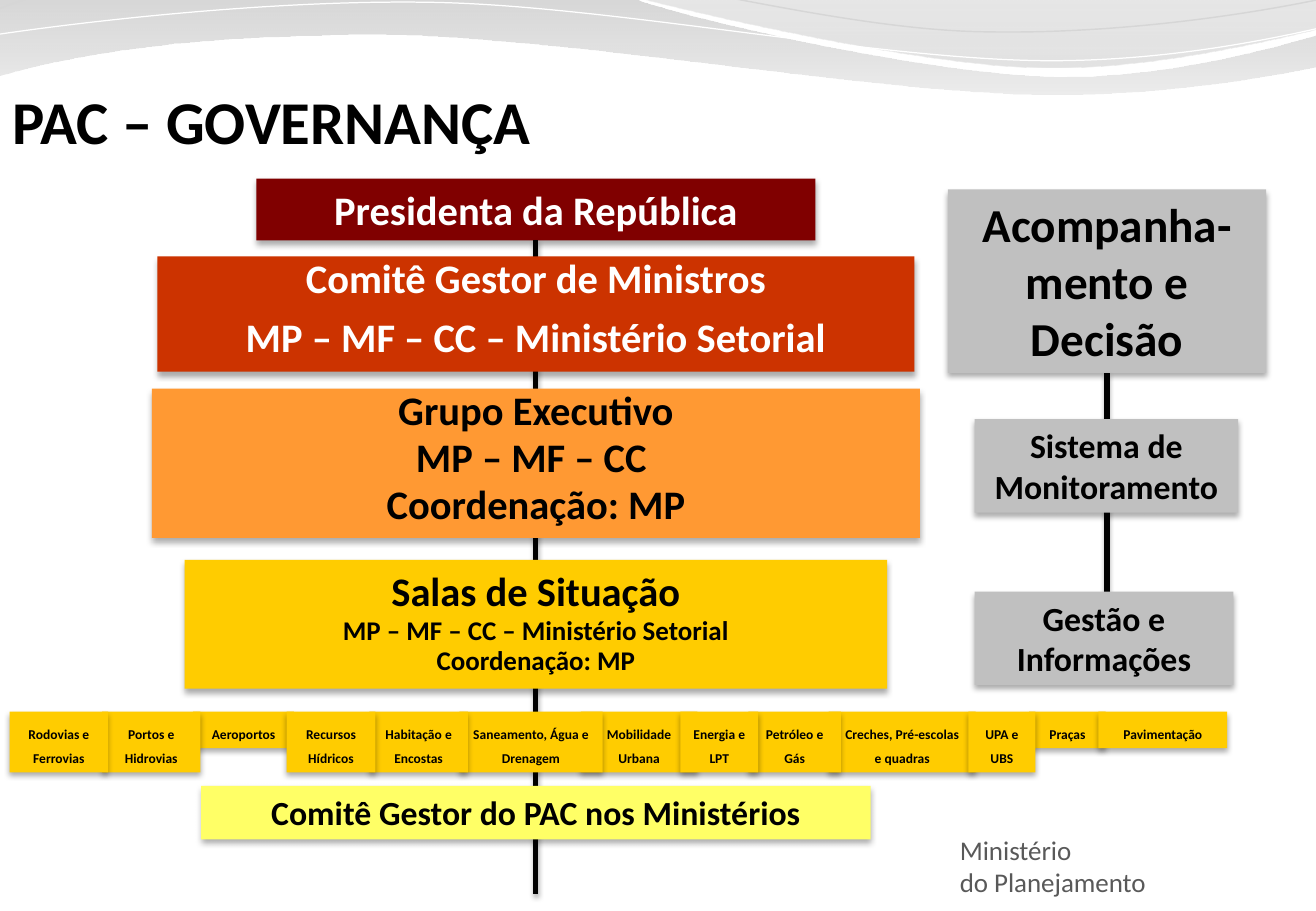
from dataclasses import dataclass

from lxml import etree
from pptx import Presentation
from pptx import util as u
from pptx.dml.color import RGBColor
from pptx.enum import shapes, text
from pptx.oxml.ns import qn

PX = 9144
SLIDE_W, SLIDE_H = 1083, 750


@dataclass(frozen=True)
class Theme:
    """Colours, font and type sizes of the slide."""
    font: str = "Calibri"
    ink: str = "000000"
    paper: str = "FFFFFF"
    muted: str = "595959"
    maroon: str = "800000"
    red: str = "CC3300"
    orange: str = "FF9933"
    gold: str = "FFCC00"
    lemon: str = "FFFF66"
    silver: str = "C0C0C0"
    hairline: str = "D6D6D6"
    low_wave: tuple = ((0, "A3A3A3", 45), (1, "DDDDDD", 55))
    high_wave: tuple = ((0, "B4B4B4", 30), (0.8, "C3C3C3", 45))
    title: int = 36
    heading: int = 28
    level: int = 24
    support: int = 20
    detail: int = 16
    sector: int = 8


T = Theme()


def px(*lengths):
    """Turn px lengths into EMU."""
    return [u.Emu(round(length * PX)) for length in lengths]


def write(frame, line, *, size, color=T.ink, bold=True, align="CENTER", leading=1.0, gap=0):
    """Add one formatted paragraph to a text frame."""
    first = frame.paragraphs[0]
    paragraph = frame.add_paragraph() if first.runs else first
    paragraph.alignment = getattr(text.PP_ALIGN, align)
    paragraph.line_spacing = leading
    paragraph.space_before = u.Pt(gap)
    run = paragraph.add_run()
    run.text = line
    run.font.name, run.font.size, run.font.bold = T.font, u.Pt(size), bold
    run.font.color.rgb = RGBColor.from_string(color)


def cast_shadow(part, alpha, blur, distance):
    """Give a part a soft shadow straight below it."""
    properties = part._element.spPr
    for old in properties.findall(qn("a:effectLst")):
        properties.remove(old)
    effects = etree.SubElement(properties, qn("a:effectLst"))
    outer = etree.SubElement(effects, qn("a:outerShdw"), blurRad=str(u.Pt(blur)),
                             dist=str(u.Pt(distance)), dir="5400000", algn="ctr", rotWithShape="0")
    tint = etree.SubElement(outer, qn("a:srgbClr"), val=T.ink)
    etree.SubElement(tint, qn("a:alpha"), val=str(alpha * 1000))


def block(slide, box, fill, lines, anchor="TOP", **style):
    """Draw a filled rectangle; each line is text or a pair of text and format."""
    panel = slide.shapes.add_shape(shapes.MSO_SHAPE.RECTANGLE, *px(*box))
    panel.fill.solid()
    panel.fill.fore_color.rgb = RGBColor.from_string(fill)
    panel.line.fill.background()
    panel.shadow.inherit = False
    cast_shadow(panel, 32, 3.5, 2.2)
    frame = panel.text_frame
    frame.word_wrap = True
    frame.vertical_anchor = getattr(text.MSO_ANCHOR, anchor)
    for index, line in enumerate(lines):
        label, extra = (line, {}) if isinstance(line, str) else line
        options = {**style, **extra}
        if index == 0:
            options["gap"] = 0
        write(frame, label, **options)
    return panel


def stem(slide, x, top, bottom):
    """Draw a thick vertical line."""
    line = slide.shapes.add_connector(shapes.MSO_CONNECTOR.STRAIGHT, *px(x, top, x, bottom))
    line.line.width = u.Pt(3)
    line.line.color.rgb = RGBColor.from_string(T.ink)
    cast_shadow(line, 35, 3.1, 1.8)
    return line


def outline(slide, start, *legs, close=True):
    """Build a freeform; legs of two numbers are straight, legs of six are cubic curves."""
    points = [leg[i:i + 2] for leg in legs for i in range(0, len(leg), 2)]
    builder = slide.shapes.build_freeform(*start, scale=PX)
    builder.add_line_segments(points, close=close)
    shape = builder.convert_to_shape()
    shape.shadow.inherit = False
    segments = iter(list(shape._element.spPr.iter(qn("a:lnTo"))))
    for leg in legs:
        segment = next(segments)
        if len(leg) == 6:
            curve = etree.Element(qn("a:cubicBezTo"))
            segment.addprevious(curve)
            for straight in (segment, next(segments), next(segments)):
                curve.append(straight[0])
                straight.getparent().remove(straight)
    return shape


def wave(slide, stops, start, *legs):
    """Draw a translucent gradient wave."""
    band = outline(slide, start, *legs)
    band.line.fill.background()
    band.fill.gradient()
    band.fill.gradient_angle = 270
    for stop, (position, color, alpha) in zip(band.fill.gradient_stops, stops):
        stop.position = position
        stop.color.rgb = RGBColor.from_string(color)
        tint = stop._gs.find(qn("a:srgbClr"))
        etree.SubElement(tint, qn("a:alpha"), val=str(alpha * 1000))


def ripple(slide, color, width, start, *legs):
    """Draw a thin curve."""
    curve = outline(slide, start, *legs, close=False)
    curve.fill.background()
    curve.line.color.rgb = RGBColor.from_string(color)
    curve.line.width = u.Pt(width)


def draw_header(slide):
    """Draw the waves across the top of the slide."""
    wave(slide, T.low_wave, (-39, -11), (494, -11), (536, 9, 763, 63, 878, 63),
         (993, 63, 1120, 19, 1170, 0), (1171, 10, 1171, 21, 1171, 32),
         (1150, 41, 1013, 78, 863, 78), (713, 77, 423, 22, 272, 29),
         (117, 31, 20, 53, -40, 75), (-40, 30, -39, 33, -39, -11))
    wave(slide, T.high_wave, (488, -12), (525, 0, 742, 52, 851, 55),
         (960, 59, 1093, 21, 1141, 10), (1141, -11))
    ripple(slide, T.hairline, 0.85, (-5, 9), (50, -14, 186, -48, 321, -45),
           (455, -42, 662, 22, 802, 26), (943, 30, 1095, 2, 1163, -20))
    ripple(slide, T.paper, 0.75, (-25, 32), (28, 23, 209, -1, 358, 2),
           (508, 5, 731, 51, 870, 50), (1009, 49, 1126, 13, 1193, -4))


def draw_title(slide, box):
    """Fill the title placeholder, outlined as a freeform in front of the other parts."""
    left, top, width, height = box
    title = slide.shapes.title
    title.left, title.top, title.width, title.height = px(*box)
    edge = outline(slide, (left, top), (left + width, top), (left + width, top + height),
                   (left, top + height))._element
    title._element.spPr.append(edge.spPr.find(qn("a:custGeom")))
    edge.getparent().replace(edge, title._element)
    frame = title.text_frame
    frame.auto_size = text.MSO_AUTO_SIZE.NONE
    frame.vertical_anchor = text.MSO_ANCHOR.TOP
    write(frame, "PAC – GOVERNANÇA", size=T.title, align="LEFT", leading=0.75)


def draw_hierarchy(slide, box):
    """Draw the levels of government, centred on one stem."""
    left, top, width, height = box
    center = left + width / 2

    def level(y, w, h, fill, lines, **style):
        """Draw one centred level."""
        return block(slide, (center - w / 2, top + y, w, h), fill, lines,
                     **{"size": T.level, **style})

    president = level(0, 460, 51, T.maroon, ["Presidenta da República"], color=T.paper)
    stem(slide, center, top + 51, top + height).begin_connect(president, 2)
    level(64, 623, 95, T.red, ["Comitê Gestor de Ministros", "MP – MF – CC – Ministério Setorial"],
          color=T.paper, leading=0.8, gap=12)
    level(173, 632, 123, T.orange, ["Grupo Executivo", "MP – MF – CC ", "Coordenação: MP"],
          leading=0.8, gap=4.8)
    detail = {"size": T.detail, "leading": 0.5, "gap": 8}
    level(314, 578, 106, T.gold, ["Salas de Situação",
                                  ("MP – MF – CC – Ministério Setorial", detail),
                                  ("Coordenação: MP", detail)])
    level(500, 551, 44, T.lemon, ["Comitê Gestor do PAC nos Ministérios"], size=T.support)


def draw_monitoring(slide, box):
    """Draw the monitoring column with its stem."""
    left, top, width, height = box
    decision = block(slide, (left, top, width, 151), T.silver, ["Acompanha-mento e Decisão"],
                     size=T.heading)
    stem(slide, left + width / 2, top + 331, top + 151).end_connect(decision, 2)
    for y, w, label in ((189, 217, "Sistema de Monitoramento"), (331, 213, "Gestão e Informações")):
        block(slide, (left + 22, top + y, w, 77), T.silver, [label], size=T.support)


def draw_sectors(slide, box):
    """Draw the row of sector rooms, back to front."""
    left, top, width, height = box
    sectors = ((470, 96, "Mobilidade Urbana"), (674, 121, "Creches, Pré-escolas e quadras"),
               (608, 76, "Petróleo e Gás"), (552, 64, "Energia e LPT"),
               (370, 118, "Saneamento, Água e Drenagem"), (296, 81, "Habitação e Encostas"),
               (151, 83, "Aeroportos"), (228, 73, "Recursos Hídricos"),
               (76, 81, "Portos e Hidrovias"), (0, 81, "Rodovias e Ferrovias"),
               (839, 63, "Praças"), (789, 55, "UPA e UBS"), (896, 106, "Pavimentação"))
    for x, w, label in sectors:
        h = height if " " in label else 30
        block(slide, (left + x, top, w, h), T.gold, [label], anchor="MIDDLE",
              size=T.sector, leading=1.5)


def draw_signature(slide, box):
    """Write the ministry's signature."""
    frame = slide.shapes.add_textbox(*px(*box)).text_frame
    frame.word_wrap = True
    for line in ("Ministério", "do Planejamento"):
        write(frame, line, size=T.detail, color=T.muted, bold=False, align="LEFT")


def main():
    """Build and save the slide."""
    deck = Presentation()
    deck.slide_width, deck.slide_height = px(SLIDE_W, SLIDE_H)
    slide = deck.slides.add_slide(deck.slide_layouts[5])
    draw_header(slide)
    draw_signature(slide, (780, 681, 195, 64))
    draw_hierarchy(slide, (125, 147, 632, 589))
    draw_monitoring(slide, (780, 156, 262, 408))
    draw_sectors(slide, (8, 586, 1002, 50))
    draw_title(slide, (0, 78, 1071, 56))
    deck.save("out.pptx")


if __name__ == "__main__":
    main()
